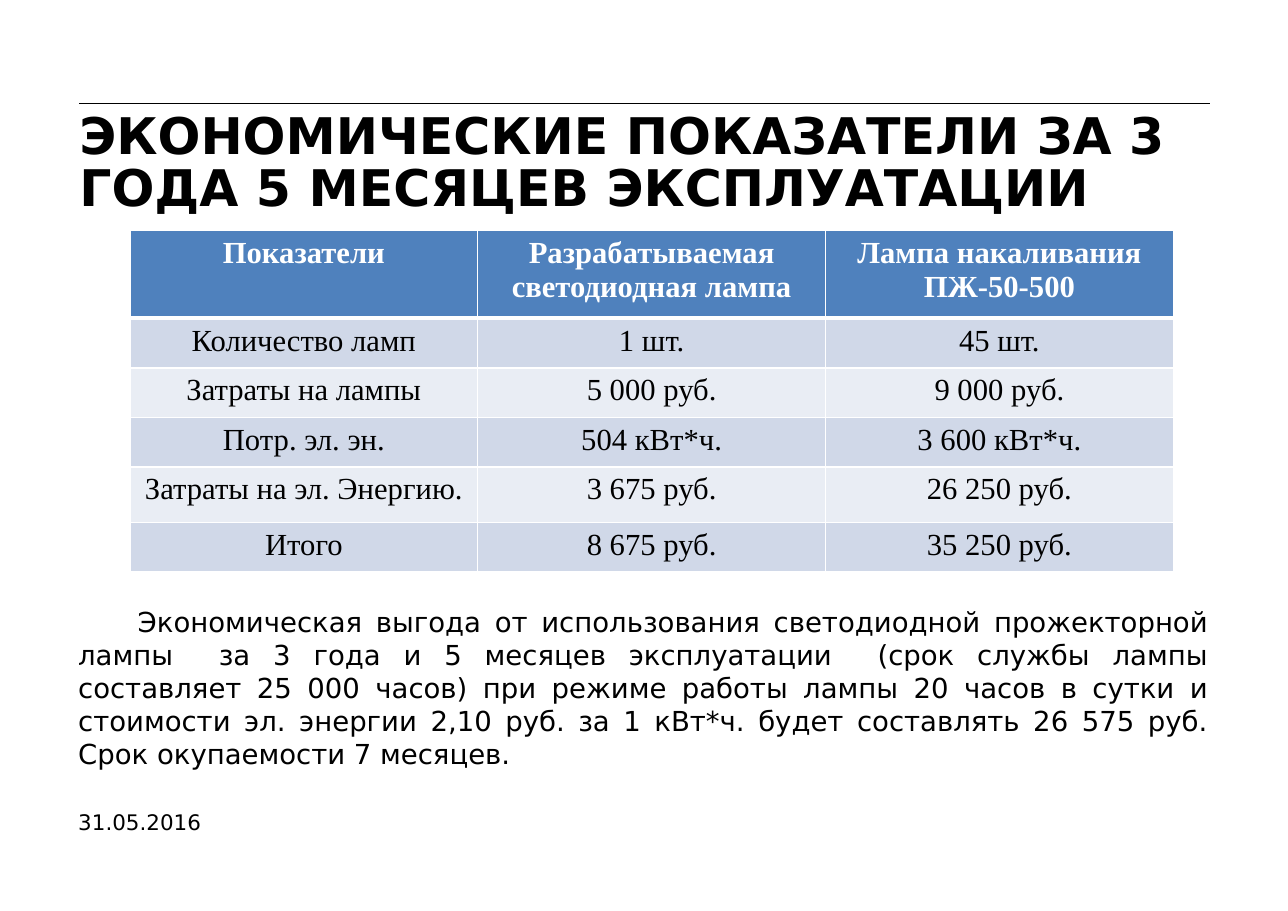
from dataclasses import dataclass

from lxml.etree import SubElement
from pptx import Presentation
from pptx.dml.color import RGBColor
from pptx.enum.shapes import MSO_CONNECTOR as Connector
from pptx.enum.text import MSO_ANCHOR as Anchor, MSO_AUTO_SIZE as AutoSize, PP_ALIGN as Align
from pptx.oxml.ns import qn
from pptx.util import Inches, Pt

COLORS = {
    "text": "000000",
    "white": "FFFFFF",
    "header": "4F81BD",
    "dark_band": "D0D8E8",
    "light_band": "E9EDF4",
}
SANS = "DejaVu Sans"
SERIF = "Times New Roman"

TITLE = "ЭКОНОМИЧЕСКИЕ ПОКАЗАТЕЛИ ЗА 3 ГОДА 5 МЕСЯЦЕВ ЭКСПЛУАТАЦИИ"
SUMMARY = (
    "Экономическая выгода от использования светодиодной прожекторной лампы  "
    "за 3 года и 5 месяцев эксплуатации  (срок службы лампы составляет "
    "25 000 часов) при режиме работы лампы 20 часов в сутки и стоимости "
    "эл. энергии 2,10 руб. за 1 кВт*ч. будет составлять 26 575 руб. "
    "Срок окупаемости 7 месяцев."
)
DATE = "31.05.2016"


@dataclass(frozen=True)
class TextStyle:
    font: str
    size: float
    color: str = "text"
    bold: bool = False
    align: Align = Align.LEFT


@dataclass(frozen=True)
class Box:
    left: float
    top: float
    width: float
    height: float

    def lengths(self) -> tuple:
        return tuple(Inches(v) for v in (self.left, self.top, self.width, self.height))


@dataclass(frozen=True)
class IndicatorRow:
    name: str
    led_lamp: str
    filament_lamp: str
    height: float = 0.45


ROWS = [
    IndicatorRow("Показатели", "Разрабатываемая светодиодная лампа",
                 "Лампа накаливания ПЖ-50-500", 0.8),
    IndicatorRow("Количество ламп", "1 шт.", "45 шт."),
    IndicatorRow("Затраты на лампы", "5 000 руб.", "9 000 руб."),
    IndicatorRow("Потр. эл. эн.", "504 кВт*ч.", "3 600 кВт*ч."),
    IndicatorRow("Затраты на эл. Энергию.", "3 675 руб.", "26 250 руб.", 0.5),
    IndicatorRow("Итого", "8 675 руб.", "35 250 руб."),
]


def rgb(name: str) -> RGBColor:
    return RGBColor.from_string(COLORS[name])


def write_text(frame, text: str, style: TextStyle):
    paragraph = frame.paragraphs[0]
    paragraph.alignment = style.align
    run = paragraph.add_run()
    run.text = text
    run.font.name = style.font
    run.font.size = Pt(style.size)
    run.font.bold = style.bold
    run.font.color.rgb = rgb(style.color)
    return paragraph


def prepare_frame(frame, anchor: Anchor) -> None:
    frame.word_wrap = True
    frame.auto_size = AutoSize.NONE
    frame.vertical_anchor = anchor
    frame.margin_left = frame.margin_top = frame.margin_right = frame.margin_bottom = 0


def add_text(slide, box: Box, text: str, style: TextStyle, anchor: Anchor = Anchor.TOP):
    frame = slide.shapes.add_textbox(*box.lengths()).text_frame
    prepare_frame(frame, anchor)
    return write_text(frame, text, style)


def set_title(slide) -> None:
    title = slide.shapes.title
    title.left, title.top, title.width, title.height = Box(0.72, 1.02, 10.26, 1.34).lengths()
    prepare_frame(title.text_frame, Anchor.TOP)
    paragraph = write_text(title.text_frame, TITLE, TextStyle(SANS, 33, bold=True))
    paragraph.line_spacing = Pt(34)


def add_rule(slide) -> None:
    rule = slide.shapes.add_connector(
        Connector.STRAIGHT, Inches(0.72), Inches(0.94), Inches(10.98), Inches(0.94))
    rule.line.color.rgb = rgb("text")
    rule.line.width = Pt(0.75)
    SubElement(rule._element.spPr, qn("a:effectLst"))


def set_borders(cell, bottom: float) -> None:
    """Draw white cell borders; call before the fill, which must come after them."""
    properties = cell._tc.get_or_add_tcPr()
    for side, width in (("L", 1), ("R", 1), ("T", 1), ("B", bottom)):
        line = SubElement(properties, qn(f"a:ln{side}"), w=str(Pt(width)))
        fill = SubElement(line, qn("a:solidFill"))
        SubElement(fill, qn("a:srgbClr"), val=COLORS["white"])


def add_indicator_table(slide) -> None:
    box = Box(1.18, 2.09, 9.47, 3.13)
    table = slide.shapes.add_table(len(ROWS), 3, *box.lengths()).table
    for column in table.columns:
        column.width = Inches(box.width / 3)
    header_style = TextStyle(SERIF, 20, "white", True, Align.CENTER)
    body_style = TextStyle(SERIF, 20, align=Align.CENTER)
    for index, row in enumerate(ROWS):
        table.rows[index].height = Inches(row.height)
        is_header = index == 0
        band = "header" if is_header else "dark_band" if index % 2 else "light_band"
        for column, text in enumerate((row.name, row.led_lamp, row.filament_lamp)):
            cell = table.cell(index, column)
            set_borders(cell, 3 if is_header else 1)
            cell.fill.solid()
            cell.fill.fore_color.rgb = rgb(band)
            write_text(cell.text_frame, text, header_style if is_header else body_style)


def main() -> None:
    presentation = Presentation()
    presentation.slide_width = Inches(11.69)
    presentation.slide_height = Inches(8.27)
    slide = presentation.slides.add_slide(presentation.slide_layouts[5])

    add_rule(slide)
    add_text(slide, Box(0.71, 7.22, 8.48, 0.36), DATE, TextStyle(SANS, 14), Anchor.BOTTOM)
    set_title(slide)
    add_indicator_table(slide)
    summary = add_text(slide, Box(0.71, 5.49, 10.26, 1.74), SUMMARY,
                       TextStyle(SANS, 18, align=Align.JUSTIFY))
    summary._p.get_or_add_pPr().set("indent", str(Inches(0.54)))

    presentation.save("out.pptx")


if __name__ == "__main__":
    main()
